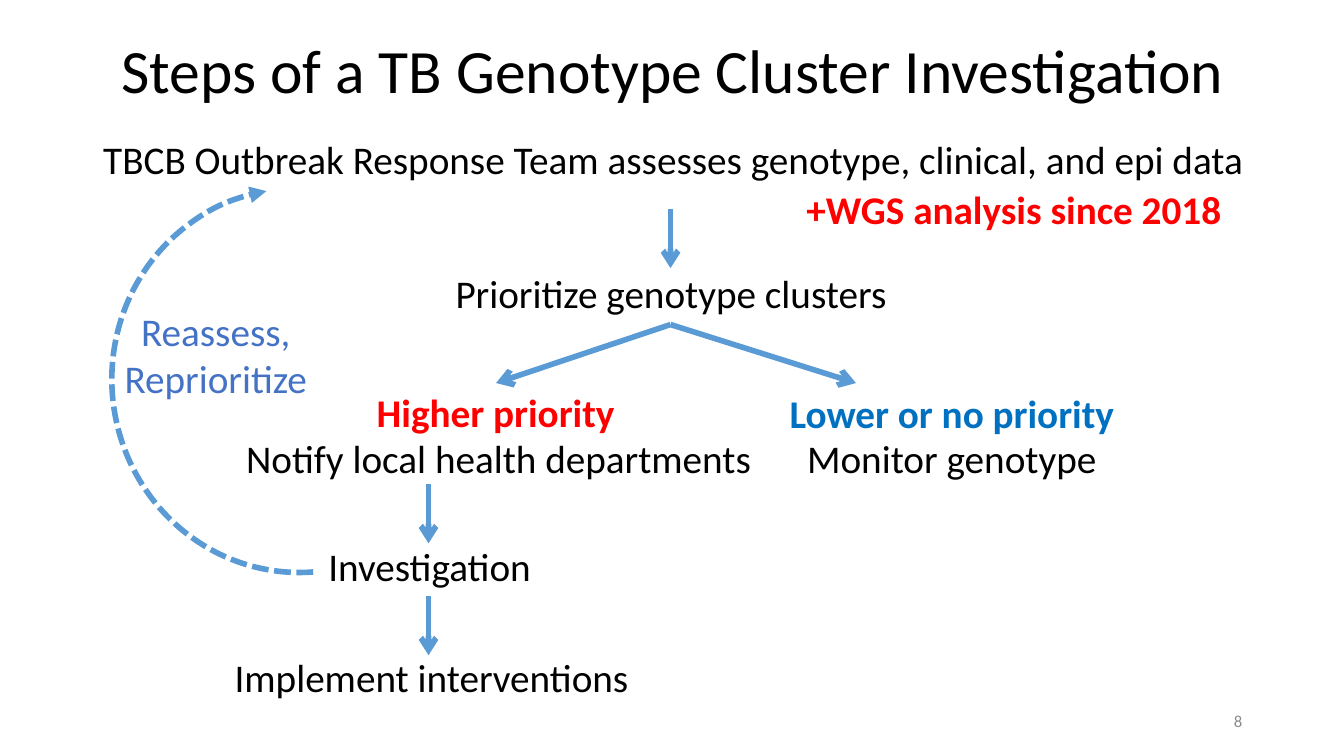
from dataclasses import dataclass

from pptx import Presentation
from pptx.dml.color import RGBColor
from pptx.enum.dml import MSO_LINE_DASH_STYLE as Dash
from pptx.enum.shapes import MSO_CONNECTOR as Conn, MSO_SHAPE as Shape
from pptx.enum.text import MSO_ANCHOR as Anchor, PP_ALIGN as Align
from pptx.oxml.ns import qn
from pptx.util import Inches, Pt
from lxml.etree import SubElement


@dataclass(frozen=True)
class Theme:
    font: str = "Calibri"
    head: int = 44
    body: int = 28
    small: int = 12
    line: int = 4
    ink: str = "000000"
    red: str = "FF0000"
    blue: str = "0070C0"
    soft: str = "4472C4"
    arrow: str = "5B9BD5"
    gray: str = "8C8C8C"


class Deck:
    def __init__(self, theme):
        self.theme = theme
        self.prs = Presentation()
        self.prs.slide_width = Inches(13.33)
        self.prs.slide_height = Inches(7.5)
        self.slide = self.prs.slides.add_slide(self.prs.slide_layouts[5])

    def place(self, shape, box):
        shape.left, shape.top, shape.width, shape.height = map(Inches, box)

    def fill(self, frame, lines, size, color, bold=False, align=Align.CENTER):
        """Write each line as a paragraph holding one run."""
        for i, line in enumerate(lines):
            para = frame.add_paragraph() if i else frame.paragraphs[0]
            para.alignment = align
            run = para.add_run()
            run.text = line
            font = run.font
            font.name, font.size, font.bold = self.theme.font, Pt(size), bold
            font.color.rgb = RGBColor.from_string(color)

    def title(self, text, box):
        shape = self.slide.shapes.title
        self.place(shape, box)
        frame = shape.text_frame
        frame.vertical_anchor = Anchor.MIDDLE
        self.fill(frame, [text], self.theme.head, self.theme.ink)
        frame.paragraphs[0].line_spacing = 0.9

    def text(self, lines, box, color=None, bold=False, wrap=True):
        frame = self.slide.shapes.add_textbox(*map(Inches, box)).text_frame
        frame.word_wrap = wrap
        self.fill(frame, lines, self.theme.body, color or self.theme.ink, bold)

    def number(self, text, box):
        frame = self.slide.shapes.add_textbox(*map(Inches, box)).text_frame
        frame.word_wrap = True
        frame.vertical_anchor = Anchor.MIDDLE
        self.fill(frame, [text], self.theme.small, self.theme.gray, align=Align.RIGHT)

    def stroke(self, shape, tip, dash=None):
        """Style a line and put an arrowhead at its end."""
        line = shape.line
        line.color.rgb = RGBColor.from_string(self.theme.arrow)
        line.width = Pt(self.theme.line)
        if dash:
            line.dash_style = dash
        SubElement(line._get_or_add_ln(), qn("a:tailEnd"), type=tip)

    def arrow(self, start, end):
        link = self.slide.shapes.add_connector(
            Conn.STRAIGHT, *map(Inches, (*start, *end)))
        self.stroke(link, "arrow")
        SubElement(link._element.spPr, qn("a:effectLst"))

    def arc(self, box, turn, ends):
        shape = self.slide.shapes.add_shape(Shape.ARC, *map(Inches, box))
        shape.rotation = turn
        shape.adjustments[0], shape.adjustments[1] = ends
        shape.fill.background()
        self.stroke(shape, "triangle", Dash.SQUARE_DOT)
        shape.shadow.inherit = False


def main():
    theme = Theme()
    deck = Deck(theme)
    row = 0.57
    deck.title("Steps of a TB Genotype Cluster Investigation", (0.47, 0.23, 12.41, 1))

    deck.text(["TBCB Outbreak Response Team assesses genotype, clinical, and epi data"],
              (0.89, 1.29, 11.57, row))
    deck.text(["+WGS analysis since 2018"], (7.87, 1.79, 4.37, row),
              theme.red, bold=True, wrap=False)
    deck.text(["Prioritize genotype clusters"], (4.26, 2.62, 4.79, row))

    deck.text(["Higher priority"], (2.41, 3.8, 5.01, row), theme.red, bold=True)
    deck.text(["Notify local health departments"], (2.31, 4.26, 5.27, row), wrap=False)
    deck.text(["Lower or no priority"], (7.71, 3.81, 3.46, row), theme.blue, bold=True)
    deck.text(["Monitor genotype"], (7.89, 4.26, 3.1, row), wrap=False)

    deck.text(["Investigation"], (3.01, 5.33, 2.5, row))
    deck.text(["Implement interventions"], (2.16, 6.43, 4.24, row), wrap=False)

    mid, left, drop = 6.65, 4.25, 0.59
    for x, y in ((mid, 2.07), (left, 4.8), (left, 5.91)):
        deck.arrow((x, y), (x, y + drop))
    for x in (4.92, 8.49):
        deck.arrow((mid, 3.22), (x, 3.8))

    deck.arc((1.05, 1.93, 3.81, 3.69), 263.8, (108.99, 214.06))
    deck.text(["Reassess,", "Reprioritize"], (1.08, 3, 2.12, 1.04), theme.soft)
    deck.number("8", (9.42, 6.95, 3, 0.4))
    deck.prs.save("out.pptx")


if __name__ == "__main__":
    main()
